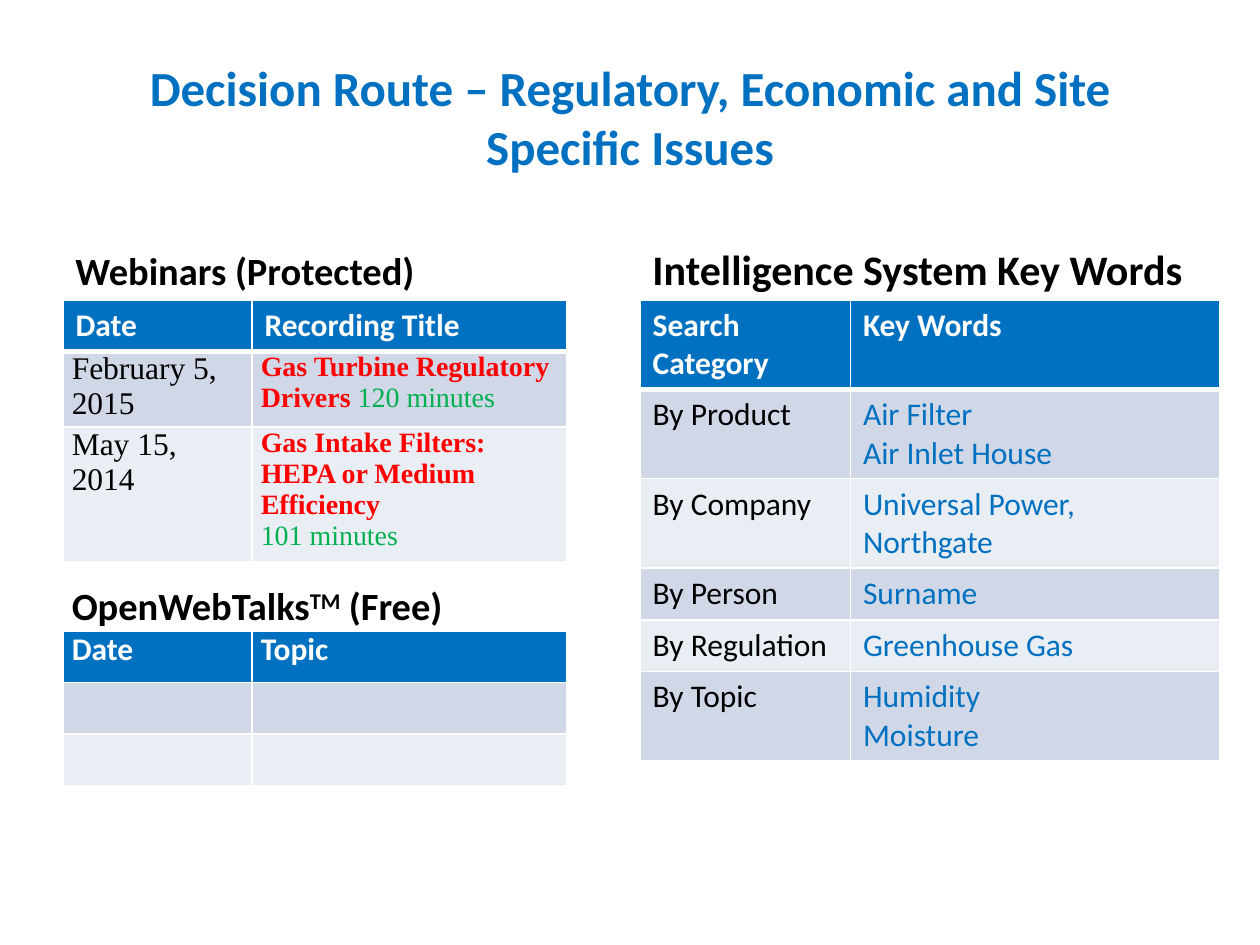
"""Build the decision route slide with its webinar and key word tables."""
import lxml.etree
import pptx
import pptx.dml.color
import pptx.enum.text
import pptx.oxml.ns
import pptx.util

Inches, Pt = pptx.util.Inches, pptx.util.Pt
ANCHOR, ALIGN = pptx.enum.text.MSO_ANCHOR, pptx.enum.text.PP_ALIGN

COLORS = {"blue": "0070C0", "white": "FFFFFF", "black": "000000", "red": "FF0000",
          "green": "00B050", "band_dark": "D0D8E8", "band_light": "E9EDF4"}
SANS, SERIF = "Calibri", "Times New Roman"

STYLES = {
    "title": (SANS, 28, "blue", True),
    "heading": (SANS, 22, "black", True),
    "big_heading": (SANS, 24, "black", True),
    "header": (SANS, 18, "white", True),
    "category": (SANS, 18, "black", False),
    "keyword": (SANS, 18, "blue", False),
    "date": (SERIF, 18, "black", False),
    "topic": (SERIF, 16, "red", True),
    "length": (SERIF, 16, "green", False),
}

TEXTS = [
    ((0.5, 0.3, 9, 1.25), ANCHOR.MIDDLE, ALIGN.CENTER,
     ("title", "Decision Route – Regulatory, Economic and Site Specific Issues")),
    ((0.5, 1.68, 4.42, 0.7), ANCHOR.BOTTOM, ALIGN.LEFT,
     ("heading", "Webinars (Protected)")),
    ((5.08, 1.68, 4.42, 0.7), ANCHOR.BOTTOM, ALIGN.LEFT,
     ("big_heading", "Intelligence System Key Words")),
]

WEBINARS = [
    ("blue", 0.41, False, [[("header", "Date")]], [[("header", "Recording Title")]]),
    ("band_dark", 0.55, True, [[("date", "February 5, 2015")]],
     [[("topic", "Gas Turbine Regulatory Drivers "), ("length", "120 minutes")]]),
    ("band_light", 0.98, True, [[("date", "May 15, 2014")]],
     [[("topic", "Gas Intake Filters: HEPA or Medium Efficiency")],
      [("length", "101 minutes")]]),
    (None, 0.55, True,
     [[("heading", "OpenWebTalks"), ("heading", "TM", 30), ("heading", " (Free)")]], []),
    ("blue", 0.41, True, [[("header", "Date")]], [[("header", "Topic")]]),
    ("band_dark", 0.41, False, [], []),
    ("band_light", 0.41, False, [], []),
]

KEY_WORDS = [
    ("By Product", ["Air Filter", "Air Inlet House"]),
    ("By Company", ["Universal Power, Northgate"]),
    ("By Person", ["Surname"]),
    ("By Regulation", ["Greenhouse Gas"]),
    ("By Topic", ["Humidity", "Moisture"]),
]
TALL_ROWS = {"By Product", "By Company", "By Topic"}


def rgb(name):
    return pptx.dml.color.RGBColor.from_string(COLORS[name])


def write(tf, paragraphs, align=ALIGN.LEFT):
    for i, runs in enumerate(paragraphs):
        p = tf.paragraphs[0] if i == 0 else tf.add_paragraph()
        p.alignment = align
        for style, text, *raised in runs:
            font, size, color, bold = STYLES[style]
            r = p.add_run()
            r.text = text
            r.font.name, r.font.size, r.font.bold = font, Pt(size), bold
            r.font.color.rgb = rgb(color)
            if raised:
                r.font._element.set("baseline", str(raised[0] * 1000))


def add_borders(cell, top, bottom):
    tc_pr = cell._tc.get_or_add_tcPr()
    qn = pptx.oxml.ns.qn
    for side, width in (("L", 1), ("R", 1), ("T", top), ("B", bottom)):
        ln = lxml.etree.SubElement(tc_pr, qn(f"a:ln{side}"), w=str(Pt(width)))
        fill = lxml.etree.SubElement(ln, qn("a:solidFill"))
        lxml.etree.SubElement(fill, qn("a:srgbClr"), val=COLORS["white"])


def add_table(slide, left, top, widths, rows):
    height = sum(row[1] for row in rows)
    frame = slide.shapes.add_table(len(rows), len(widths), Inches(left), Inches(top),
                                   Inches(sum(widths)), Inches(height))
    table = frame.table
    table.horz_banding = False
    for column, width in zip(table.columns, widths):
        column.width = Inches(width)
    for i, (fill, height, tight, *contents) in enumerate(rows):
        table.rows[i].height = Inches(height)
        for j, paragraphs in enumerate(contents):
            cell = table.cell(i, j)
            add_borders(cell, 3 if i == 1 else 1, 3 if i == 0 else 1)
            if fill:
                cell.fill.solid()
                cell.fill.fore_color.rgb = rgb(fill)
            else:
                cell.fill.background()
                cell.vertical_anchor = ANCHOR.BOTTOM
            if tight:
                cell.margin_left = cell.margin_right = Inches(0.07)
                cell.margin_top = cell.margin_bottom = 0
            write(cell.text_frame, paragraphs)
        if not fill:
            table.cell(i, 0).merge(table.cell(i, len(widths) - 1))


def key_word_rows():
    rows = [("blue", 0.71, False, [[("header", "Search Category")]],
             [[("header", "Key Words")]])]
    for i, (category, words) in enumerate(KEY_WORDS):
        rows.append((("band_dark", "band_light")[i % 2],
                     0.71 if category in TALL_ROWS else 0.41, False,
                     [[("category", category)]], [[("keyword", w)] for w in words]))
    return rows


def main():
    prs = pptx.Presentation()
    prs.slide_width, prs.slide_height = Inches(10), Inches(7.5)
    slide = prs.slides.add_slide(prs.slide_layouts[6])
    for box, anchor, align, run in TEXTS:
        tf = slide.shapes.add_textbox(*map(Inches, box)).text_frame
        tf.word_wrap = True
        tf.vertical_anchor = anchor
        write(tf, [[run]], align)
    add_table(slide, 0.5, 2.38, (1.5, 2.5), WEBINARS)
    add_table(slide, 5.08, 2.38, (1.67, 2.93), key_word_rows())
    prs.save("out.pptx")


if __name__ == "__main__":
    main()
